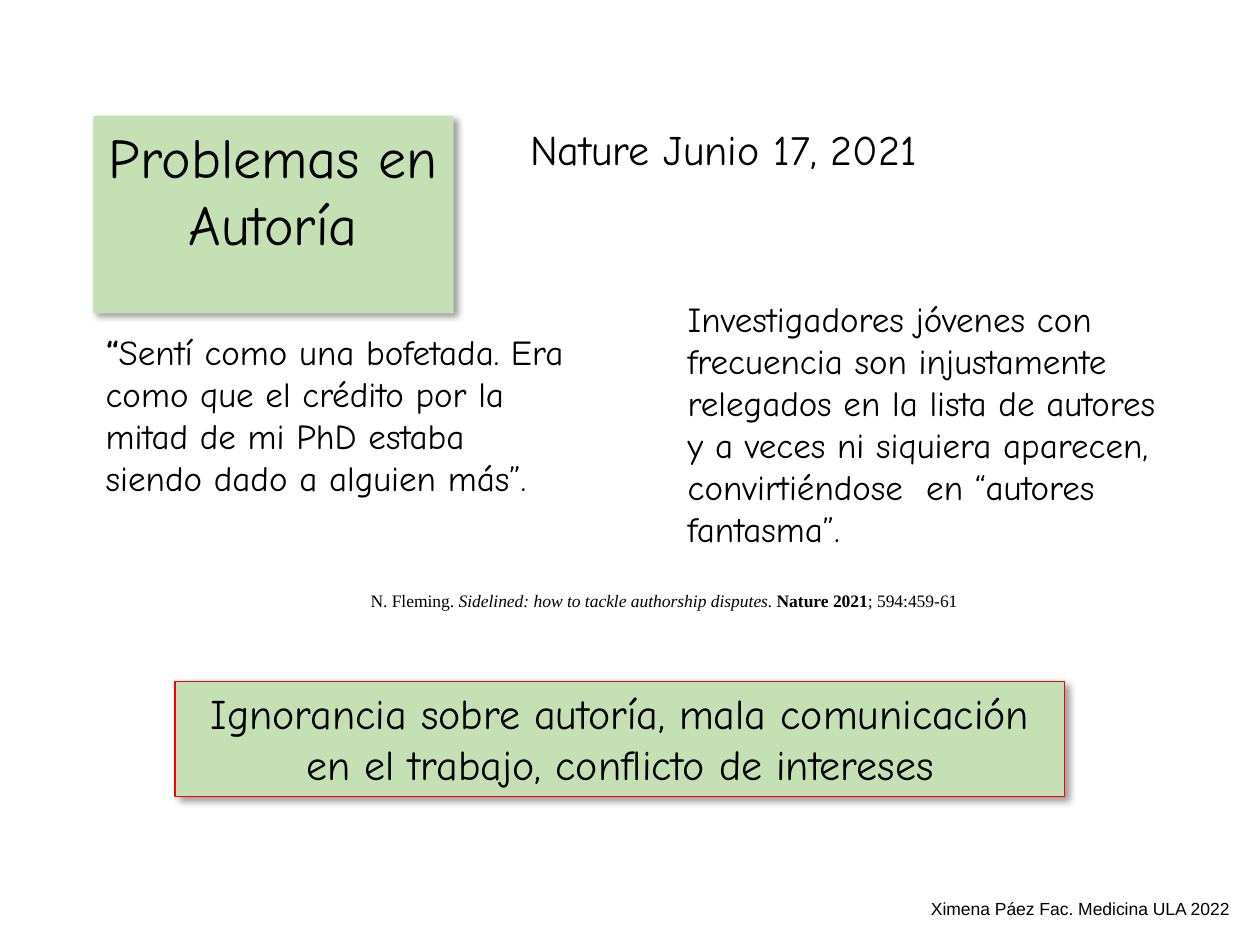
from pptx import Presentation
from pptx.dml.color import RGBColor
from pptx.enum.shapes import MSO_SHAPE
from pptx.enum.text import MSO_ANCHOR, MSO_AUTO_SIZE, PP_ALIGN
from pptx.oxml import parse_xml
from pptx.oxml.ns import nsdecls, qn
from pptx.util import Inches, Pt

BLACK = RGBColor(0x00, 0x00, 0x00)
GREEN = RGBColor(0xC5, 0xE0, 0xB4)
RED = RGBColor(0xFF, 0x00, 0x00)
HAND, SERIF, SANS = "Comic Neue", "Times New Roman", "Arial"

# Content: each text is a list of (words, style) runs; boxes are left, top, width, height in inches
TITLE = dict(box=(0.74, 0.92, 2.86, 1.18), size=32, align=PP_ALIGN.CENTER,
             runs=[("Problemas en Autoría", "")])
CAUSES = dict(box=(1.39, 5.41, 7.06, 0.91), size=24, align=PP_ALIGN.CENTER,
              runs=[("Ignorancia sobre autoría, mala comunicación en el trabajo, "
                     "conflicto de intereses", "")])
TEXTS = [
    dict(box=(7.29, 7.08, 2.6, 0.27), size=10, font=SANS, wrap=False,
         runs=[("Ximena Páez Fac. Medicina ULA 2022", "")]),
    dict(box=(4.11, 0.93, 3.78, 0.5), size=24, wrap=False,
         runs=[("Nature Junio 17, 2021", "")]),
    dict(box=(2.77, 4.63, 5, 0.27), size=10, font=SERIF, align=PP_ALIGN.CENTER,
         runs=[("N. Fleming. ", ""),
               ("Sidelined: how to tackle authorship disputes. ", "italic"),
               ("Nature 2021", "bold"),
               ("; 594:459-61", "")]),
    dict(box=(0.74, 2.57, 3.86, 1.45), size=20,
         runs=[("“", "bold"),
               ("Sentí como una bofetada. Era como que el crédito por la mitad de mi PhD "
                "estaba siendo dado a alguien más”.", "")]),
    dict(box=(5.36, 2.31, 3.97, 2.12), size=20,
         runs=[("Investigadores jóvenes con frecuencia son injustamente relegados en la "
                "lista de autores y a veces ni siquiera aparecen, convirtiéndose  en "
                "“autores fantasma”.", "")]),
]


def write(shape, runs, size, font=HAND, align=PP_ALIGN.LEFT, wrap=True):
    frame = shape.text_frame
    frame.word_wrap = wrap
    frame.auto_size = MSO_AUTO_SIZE.SHAPE_TO_FIT_TEXT
    frame.vertical_anchor = MSO_ANCHOR.TOP
    paragraph = frame.paragraphs[0]
    paragraph.alignment = align
    paragraph.font.name = font
    paragraph.font.size = Pt(size)
    paragraph.font.color.rgb = BLACK
    for words, style in runs:
        run = paragraph.add_run()
        run.text = words
        if style:
            setattr(run.font, style, True)


def make_card(shape):
    """Green fill with a soft shadow to the lower right."""
    shape.fill.solid()
    shape.fill.fore_color.rgb = GREEN
    shape.shadow.inherit = False
    shape._element.spPr.find(qn("a:effectLst")).append(parse_xml(
        f'<a:outerShdw {nsdecls("a")} blurRad="{Pt(4)}" dist="{Pt(3)}" dir="2700000" '
        'algn="tl" rotWithShape="0"><a:srgbClr val="000000"><a:alpha val="40000"/>'
        '</a:srgbClr></a:outerShdw>'))


def split(part):
    """Separate a part's box, in EMU, from its text settings."""
    settings = dict(part)
    return [Inches(length) for length in settings.pop("box")], settings


prs = Presentation()
prs.slide_width, prs.slide_height = Inches(10), Inches(7.5)
slide = prs.slides.add_slide(prs.slide_layouts[5])

# Title card
box, settings = split(TITLE)
title = slide.shapes.title
title.left, title.top, title.width, title.height = box
make_card(title)
write(title, **settings)

# Date, quotes, reference and credit
for part in TEXTS:
    box, settings = split(part)
    write(slide.shapes.add_textbox(*box), **settings)

# Causes card
box, settings = split(CAUSES)
causes = slide.shapes.add_shape(MSO_SHAPE.RECTANGLE, *box)
causes.line.color.rgb = RED
causes.line.width = Pt(0.75)
make_card(causes)
write(causes, **settings)

prs.save("out.pptx")
